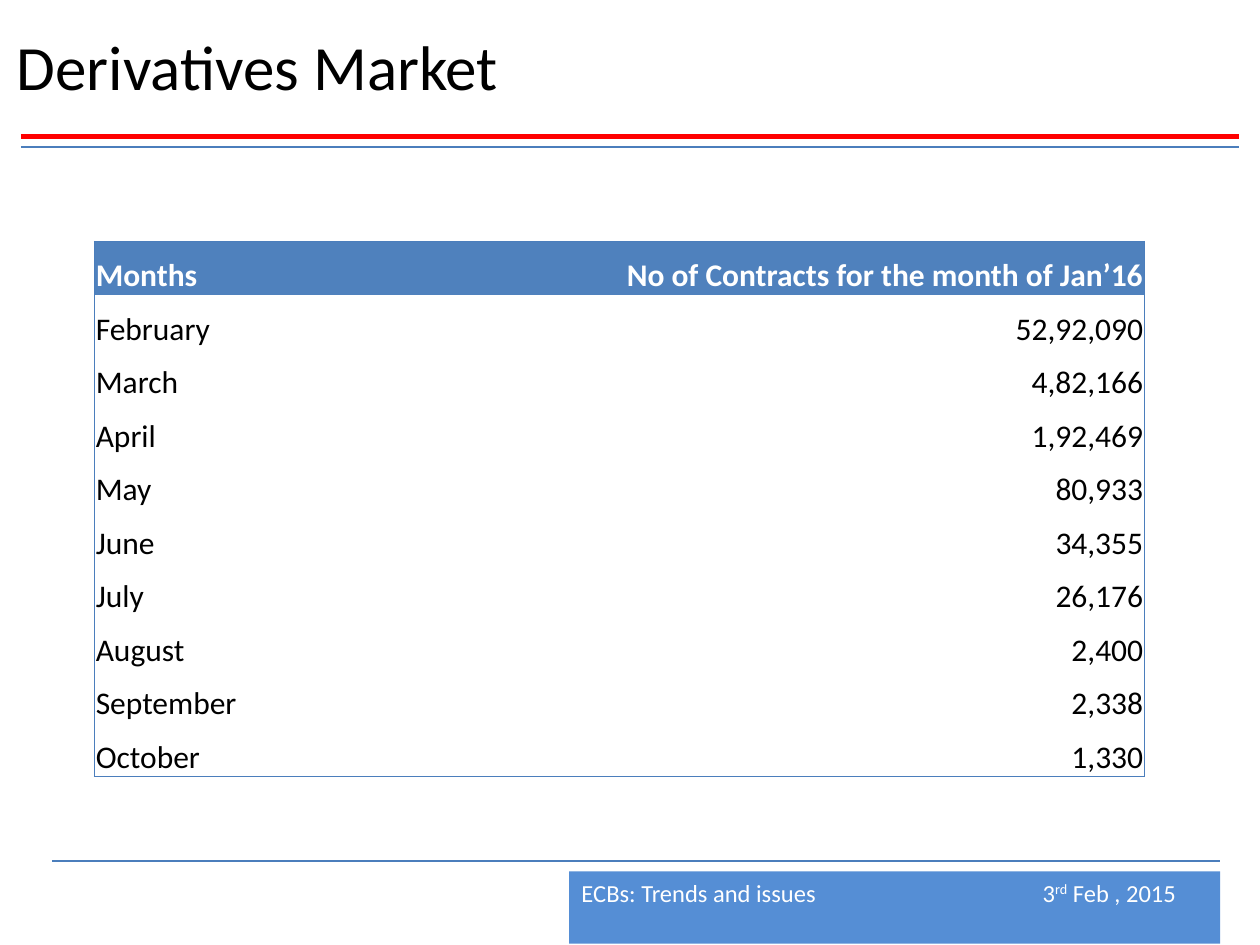
import pptx
import pptx.dml.color
import pptx.enum.shapes
import pptx.enum.text
import pptx.oxml.ns
import pptx.util
from lxml import etree

Pt = pptx.util.Pt
ALIGN = pptx.enum.text.PP_ALIGN
ANCHOR = pptx.enum.text.MSO_ANCHOR
FONT = "Calibri"
BLACK, WHITE, RED = "000000", "FFFFFF", "FF0000"
RULE_BLUE, HEADER_BLUE, FOOTER_BLUE = "4B7EBC", "4F81BD", "558ED5"

CONTRACTS = [
    ("Months", "No of Contracts for the month of Jan’16"),
    ("February", "52,92,090"),
    ("March", "4,82,166"),
    ("April", "1,92,469"),
    ("May", "80,933"),
    ("June", "34,355"),
    ("July", "26,176"),
    ("August", "2,400"),
    ("September", "2,338"),
    ("October", "1,330"),
]


def color(value):
    return pptx.dml.color.RGBColor.from_string(value)


def add_child(parent, tag, **attributes):
    return etree.SubElement(parent, pptx.oxml.ns.qn(tag), **attributes)


def style_font(font, size, value, bold=False):
    font.name = FONT
    font.size = Pt(size)
    font.bold = bold
    font.color.rgb = color(value)


def add_rule(slide, left, right, top, value, width):
    rule = slide.shapes.add_connector(
        pptx.enum.shapes.MSO_CONNECTOR.STRAIGHT, Pt(left), Pt(top), Pt(right), Pt(top))
    rule.line.color.rgb = color(value)
    rule.line.width = Pt(width)
    add_child(rule._element.spPr, "a:effectLst")


def add_box(slide, left, top, width, height, anchor):
    box = slide.shapes.add_shape(
        pptx.enum.shapes.MSO_SHAPE.RECTANGLE, Pt(left), Pt(top), Pt(width), Pt(height))
    box.shadow.inherit = False
    box.text_frame.word_wrap = True
    box.text_frame.vertical_anchor = anchor
    box.text_frame.paragraphs[0].alignment = ALIGN.LEFT
    return box


def add_title(slide, text):
    box = add_box(slide, 2.5, 2.5, 717.5, 70, ANCHOR.MIDDLE)
    box.fill.background()
    box.line.color.rgb = color(WHITE)
    box.line.width = Pt(0.75)
    para = box.text_frame.paragraphs[0]
    para.text = text
    style_font(para.runs[0].font, 36, BLACK)


def add_footer(slide, topic, day, suffix, rest):
    box = add_box(slide, 325.2, 498, 372, 41.2, ANCHOR.TOP)
    box.fill.solid()
    box.fill.fore_color.rgb = color(FOOTER_BLUE)
    box.line.fill.background()
    para = box.text_frame.paragraphs[0]
    tabs = add_child(para._p.get_or_add_pPr(), "a:tabLst")
    add_child(tabs, "a:tab", pos=str(Pt(263.5)), algn="l")
    for text in (f"{topic}\t{day}", suffix, rest):
        span = para.add_run()
        span.text = text
        style_font(span.font, 14, WHITE)
        if text == suffix:
            span.font._element.set("baseline", "30000")


def set_borders(cell, visible_sides):
    properties = cell._tc.get_or_add_tcPr()
    for side in "LRTB":
        border = add_child(properties, f"a:ln{side}", w=str(Pt(0.75)))
        if side in visible_sides:
            fill = add_child(border, "a:solidFill")
            add_child(fill, "a:srgbClr", val=RULE_BLUE)
        else:
            add_child(border, "a:noFill")


def fill_cell(cell, text, is_header, is_last, is_month):
    sides = ("L" if is_month else "R") + "T" * is_header + "B" * is_last
    set_borders(cell, sides)
    if is_header:
        cell.fill.solid()
        cell.fill.fore_color.rgb = color(HEADER_BLUE)
    else:
        cell.fill.background()
    cell.margin_left = cell.margin_right = cell.margin_top = Pt(0.75)
    cell.margin_bottom = Pt(0)
    cell.vertical_anchor = ANCHOR.BOTTOM
    para = cell.text_frame.paragraphs[0]
    para.text = text
    para.alignment = ALIGN.LEFT if is_month else ALIGN.RIGHT
    style_font(para.runs[0].font, 18, WHITE if is_header else BLACK, is_header)


def add_contract_table(slide, rows):
    table = slide.shapes.add_table(
        len(rows), 2, Pt(54), Pt(138), Pt(600), Pt(306)).table
    table.horz_banding = False
    table.columns[0].width = Pt(108)
    table.columns[1].width = Pt(492)
    for row, texts in enumerate(rows):
        for column, text in enumerate(texts):
            fill_cell(table.cell(row, column), text,
                      row == 0, row == len(rows) - 1, column == 0)


def main():
    deck = pptx.Presentation()
    deck.slide_width, deck.slide_height = Pt(720), Pt(540)
    slide = deck.slides.add_slide(deck.slide_layouts[6])
    add_rule(slide, 12, 708, 78, RED, 3)
    add_rule(slide, 12, 708, 84, RULE_BLUE, 0.75)
    add_footer(slide, "ECBs: Trends and issues", "3", "rd", " Feb , 2015")
    add_rule(slide, 30, 697, 492, RULE_BLUE, 0.75)
    add_title(slide, "Derivatives Market")
    add_contract_table(slide, CONTRACTS)
    deck.save("out.pptx")


if __name__ == "__main__":
    main()
